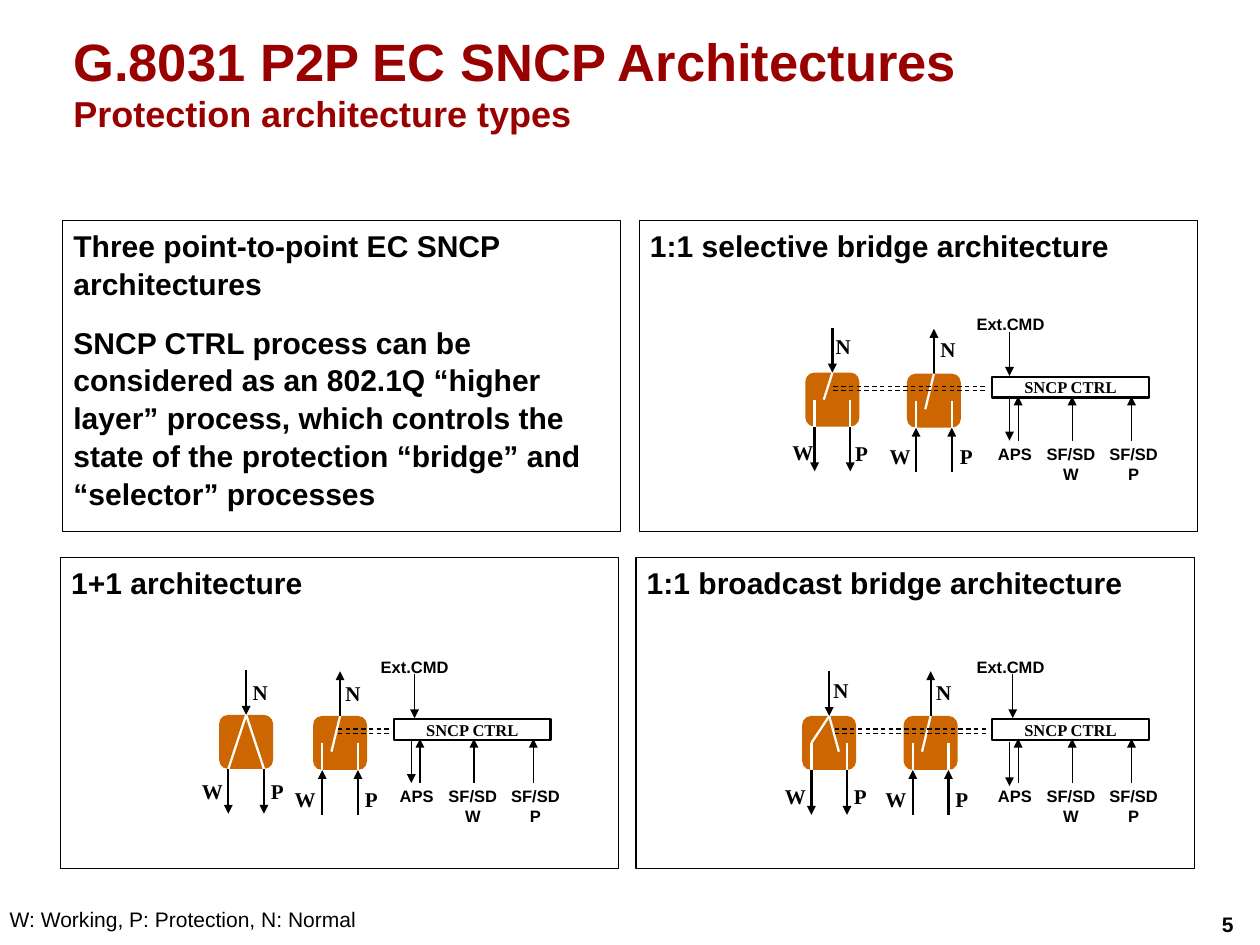
from dataclasses import dataclass
from lxml import etree
from pptx import Presentation
from pptx.dml.color import RGBColor
from pptx.enum.dml import MSO_LINE
from pptx.enum.shapes import MSO_CONNECTOR, MSO_SHAPE
from pptx.enum.text import MSO_ANCHOR, MSO_AUTO_SIZE, PP_ALIGN
from pptx.oxml.ns import qn
from pptx.util import Inches, Pt

LEFT, CENTER = PP_ALIGN.LEFT, PP_ALIGN.CENTER
TOP, MIDDLE, BOTTOM = MSO_ANCHOR.TOP, MSO_ANCHOR.MIDDLE, MSO_ANCHOR.BOTTOM
RECT, ROUND = MSO_SHAPE.RECTANGLE, MSO_SHAPE.ROUNDED_RECTANGLE
STRAIGHT, DASH, FIXED = MSO_CONNECTOR.STRAIGHT, MSO_LINE.DASH, MSO_AUTO_SIZE.NONE


@dataclass(frozen=True)
class Theme:
    black: str = "000000"
    white: str = "FFFFFF"
    red: str = "990000"
    orange: str = "CC6600"
    sans: str = "Arial"
    serif: str = "Times New Roman"
    title: int = 35
    sub: int = 24
    body: int = 20
    note: int = 14
    small: int = 11
    thin: float = 0.75
    thick: float = 1.5


theme = Theme()

HEADS = ["G.8031 P2P EC SNCP Architectures", "Protection architecture types"]
PANELS = [
    ((0.58, 2.04), ["Three point-to-point EC SNCP architectures",
                    "SNCP CTRL process can be considered as an 802.1Q “higher layer” process, "
                    "which controls the state of the protection “bridge” and “selector” processes"]),
    ((5.92, 2.04), ["1:1 selective bridge architecture"]),
    ((0.56, 5.16), ["1+1 architecture"]),
    ((5.89, 5.16), ["1:1 broadcast bridge architecture"]),
]
FOOT = "W: Working, P: Protection, N: Normal"
PAGE = "5"

BOX, WORK, PROT, MID, REACH = 0.5, 0.085, 0.415, 0.25, 0.415
APEX = (MID, 0)
STUBS = [((WORK, MID), (WORK, BOX)), ((PROT, MID), (PROT, BOX))]
INNER = {
    "plus": [(APEX, (WORK, BOX)), (APEX, (PROT, BOX))],
    "selective": STUBS + [((0.17, 0.25), APEX)],
    "broadcast": STUBS + [((WORK, MID), APEX), ((0.34, 0.33), APEX)],
    "selector": STUBS + [((0.17, 0.33), APEX)],
}
NODES = [
    ("plus", (2.03, 6.62), {"W": (1.87, 7.21), "P": (2.51, 7.21), "N": (2.34, 6.29)}),
    ("selector", (2.9, 6.63), {"W": (2.73, 7.28), "P": (3.38, 7.28), "N": (3.2, 6.3)}),
    ("selective", (7.46, 3.45), {"W": (7.34, 4.07), "P": (7.92, 4.08), "N": (7.74, 3.09)}),
    ("selector", (8.4, 3.46), {"W": (8.24, 4.11), "P": (8.89, 4.11), "N": (8.71, 3.12)}),
    ("broadcast", (7.43, 6.63), {"W": (7.27, 7.25), "P": (7.91, 7.25), "N": (7.72, 6.27)}),
    ("selector", (8.37, 6.63), {"W": (8.2, 7.28), "P": (8.85, 7.28), "N": (8.67, 6.29)}),
]
CTRLS = [
    {"at": (3.65, 6.66), "dash": (3.13, 3.61), "cmd": 0.19, "word": -0.23, "drop": 0.18},
    {"at": (9.19, 3.49), "dash": (7.72, 9.13), "cmd": 0.16, "word": -0.25, "drop": 0.18},
    {"at": (9.19, 6.66), "dash": (7.73, 9.14), "cmd": 0.19, "word": -0.25, "drop": 0.21},
]
PORTS = [(-0.05, 0.52, ["APS"]), (0.4, 0.66, ["SF/SD", "W"]), (0.98, 0.66, ["SF/SD", "P"])]
RISERS = [0.24, 0.74, 1.29]


def rgb(code):
    return RGBColor.from_string(code)


def put(frame, lines, size=theme.small, font=theme.sans, color=theme.black, bold=True,
        align=LEFT, anchor=TOP, pad=(0, 0), gap=0, pitch=1.0):
    frame.word_wrap = True
    frame.auto_size = FIXED
    frame.vertical_anchor = anchor
    frame.margin_left = frame.margin_right = Inches(pad[0])
    frame.margin_top = frame.margin_bottom = Inches(pad[1])
    for i, line in enumerate(lines):
        para = frame.paragraphs[0] if i == 0 else frame.add_paragraph()
        para.alignment = align
        para.line_spacing = pitch
        para.space_before = Pt(gap if i else 0)
        props = para._p.get_or_add_pPr()
        props.set("marL", "0")
        props.set("indent", "0")
        etree.SubElement(props, qn("a:buNone"))
        run = para.add_run()
        run.text = line
        run.font.size = Pt(size)
        run.font.name = font
        run.font.bold = bold
        run.font.color.rgb = rgb(color)


def label(slide, at, wide, high, lines, **style):
    area = slide.shapes.add_textbox(*map(Inches, (*at, wide, high)))
    put(area.text_frame, lines, **style)


def place(shape, at, wide, high):
    shape.left, shape.top = map(Inches, at)
    shape.width, shape.height = Inches(wide), Inches(high)


def shift(base, point):
    return base[0] + point[0], base[1] + point[1]


def wire(slide, start, end, color=theme.black, width=theme.thin, tip=False, dash=False):
    line = slide.shapes.add_connector(STRAIGHT, *map(Inches, (*start, *end)))
    line.line.color.rgb = rgb(color)
    line.line.width = Pt(width)
    if dash:
        line.line.dash_style = DASH
    props = line._element.spPr
    if tip:
        etree.SubElement(props.find(qn("a:ln")), qn("a:tailEnd"), type="triangle")
    etree.SubElement(props, qn("a:effectLst"))
    return line


def node(slide, kind, at, names):
    box = slide.shapes.add_shape(ROUND, *map(Inches, (*at, BOX, BOX)))
    box.shadow.inherit = False
    box.fill.solid()
    box.fill.fore_color.rgb = rgb(theme.orange)
    box.line.fill.background()
    ports = [((MID, -REACH), APEX)]
    ports += [((x, BOX), (x, BOX + REACH)) for x in (WORK, PROT)]
    if kind == "selector":
        ports = [(end, start) for start, end in ports]
    links = [(pair, theme.black) for pair in ports] + [(pair, theme.white) for pair in INNER[kind]]
    for (start, end), color in links:
        line = wire(slide, shift(at, start), shift(at, end), color=color,
                    width=theme.thick, tip=color == theme.black)
        if start == APEX:
            line.begin_connect(box, 0)
        if end == APEX:
            line.end_connect(box, 0)
    for name, spot in names.items():
        label(slide, spot, 0.2, 0.21, [name], size=theme.note, font=theme.serif)


def ctrl(slide, at, dash, cmd, word, drop):
    bar = slide.shapes.add_shape(RECT, *map(Inches, (*at, 1.45, 0.19)))
    bar.shadow.inherit = False
    bar.fill.background()
    bar.line.color.rgb = rgb(theme.black)
    bar.line.width = Pt(theme.thick)
    put(bar.text_frame, ["SNCP CTRL"], font=theme.serif, align=CENTER, anchor=MIDDLE)
    for y in (0.09, 0.13):
        wire(slide, (dash[0], at[1] + y), (dash[1], at[1] + y), dash=True)
    arrows = [((cmd, -0.42), (cmd, -0.01)), ((0.16, drop), (0.16, drop + 0.41))]
    arrows += [((x, 0.59), (x, 0.18)) for x in RISERS]
    for start, end in arrows:
        wire(slide, shift(at, start), shift(at, end), tip=True)
    label(slide, shift(at, (word, -0.58)), 0.84, 0.19, ["Ext.CMD"], align=CENTER)
    for x, wide, lines in PORTS:
        label(slide, shift(at, (x, 0.62)), wide, 0.19 * len(lines), lines, align=CENTER)


def main():
    deck = Presentation()
    deck.slide_width, deck.slide_height = Inches(11.67), Inches(8.75)
    slide = deck.slides.add_slide(deck.slide_layouts[4])
    title, *bodies = slide.placeholders
    place(title, (0.58, 0.2), 10.5, 1.1)
    put(title.text_frame, HEADS, size=theme.title, color=theme.red, anchor=BOTTOM, pad=(0.1, 0.05))
    title.text_frame.paragraphs[1].runs[0].font.size = Pt(theme.sub)
    for body, (at, lines) in zip(bodies, PANELS):
        place(body, at, 5.17, 2.88)
        body.line.color.rgb = rgb(theme.black)
        body.line.width = Pt(theme.thin)
        put(body.text_frame, lines, size=theme.body, pad=(0.1, 0.05), gap=14, pitch=1.05)
    for kind, at, names in NODES:
        node(slide, kind, at, names)
    for item in CTRLS:
        ctrl(slide, **item)
    label(slide, (0.09, 8.39), 3.4, 0.24, [FOOT], size=theme.note, bold=False)
    label(slide, (11.22, 8.39), 0.44, 0.34, [PAGE], size=theme.note, pad=(0.1, 0.05))
    deck.save("out.pptx")


if __name__ == "__main__":
    main()
